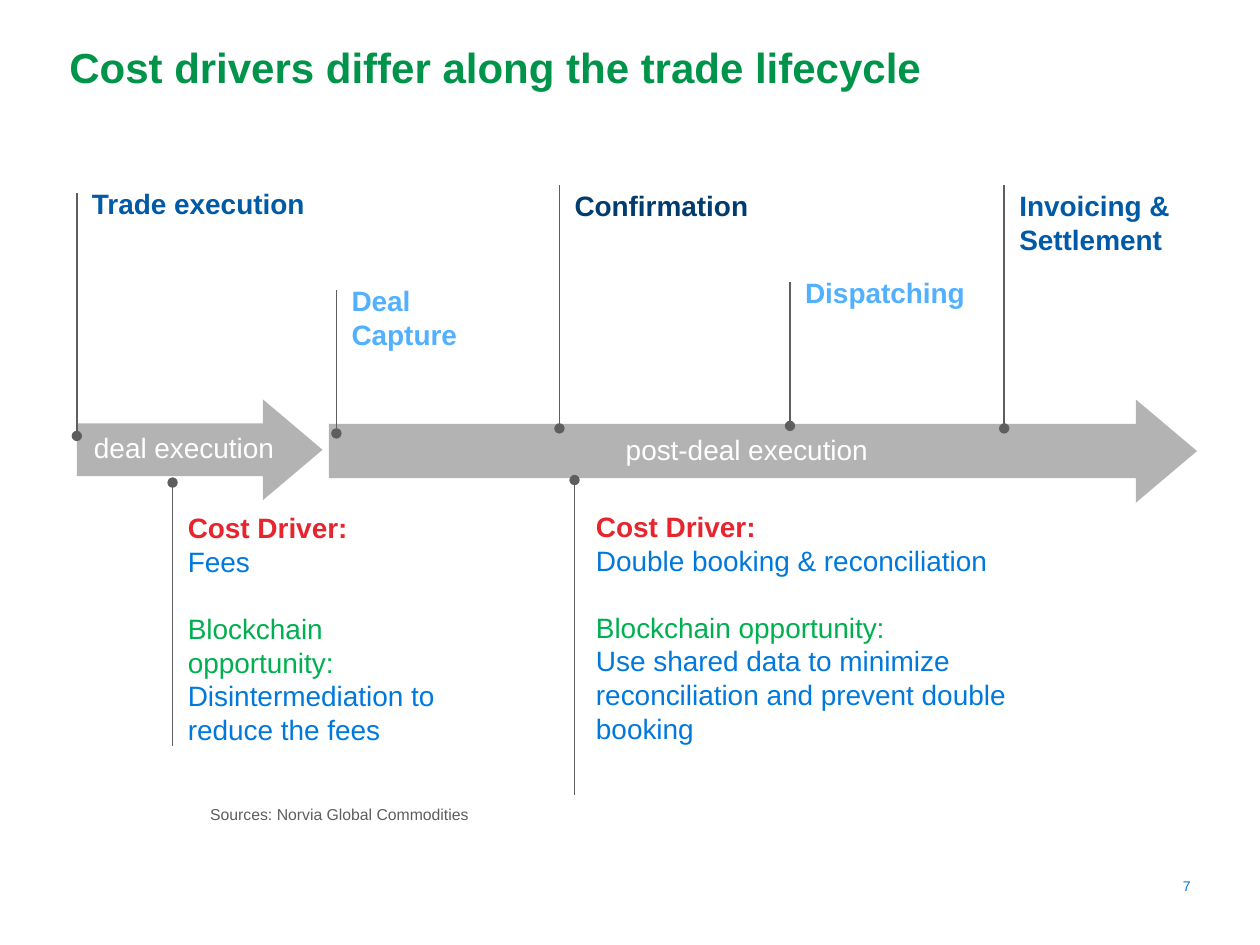
"""Build the slide on cost drivers along the trade lifecycle."""
from lxml import etree
from pptx import Presentation
from pptx.dml.color import RGBColor
from pptx.enum.shapes import MSO_CONNECTOR as CONNECTOR, MSO_SHAPE as SHAPE
from pptx.enum.text import MSO_ANCHOR as ANCHOR, PP_ALIGN as ALIGN
from pptx.oxml.ns import qn
from pptx.util import Inches, Pt

GREY = "5E5E5E"
BLUE = "0078DC"
RED = "E6252E"
GREEN = "00B050"


def rgb(code):
    return RGBColor.from_string(code)


def write(shape, lines, size, anchor=ANCHOR.TOP, align=ALIGN.LEFT, spacing=None, insets=(0, 0, 0, 0)):
    frame = shape.text_frame
    frame.word_wrap = True
    frame.vertical_anchor = anchor
    frame.margin_left, frame.margin_top, frame.margin_right, frame.margin_bottom = map(Inches, insets)
    frame.text = "\n".join(text for text, color, bold in lines)
    for paragraph, (text, color, bold) in zip(frame.paragraphs, lines):
        paragraph.alignment = align
        paragraph.line_spacing = spacing or Pt(size * 1.2)
        font = paragraph.runs[0].font
        font.name = "Arial"
        font.size = Pt(size)
        font.bold = bold
        font.color.rgb = rgb(color)


deck = Presentation()
deck.slide_width, deck.slide_height = Inches(10), Inches(7.5)
slide = deck.slides.add_slide(deck.slide_layouts[5])
shapes = slide.shapes

title = shapes.title
title.left, title.top, title.width, title.height = map(Inches, (0.55, 0.33, 8.9, 0.98))
write(title, [("Cost drivers differ along the trade lifecycle", "00944A", True)], 24)

phases = [
    ("deal execution", 0.61, 1.95, 0.8),
    ("post-deal execution", 2.61, 6.89, 0.82),
]
for phase, left, width, height in phases:
    arrow = shapes.add_shape(SHAPE.RIGHT_ARROW, Inches(left), Inches(3.17), Inches(width), Inches(height))
    arrow.adjustments[0], arrow.adjustments[1] = 0.525, 0.592
    arrow.shadow.inherit = False
    arrow.fill.solid()
    arrow.fill.fore_color.rgb = rgb("B3B3B3")
    arrow.line.fill.background()
    write(arrow, [(phase, "FFFFFF", False)], 16, ANCHOR.MIDDLE, ALIGN.CENTER, 0.9, (0.1, 0.05, 0.1, 0.05))

steps = [
    ("Trade execution", "005AA5", 0.61, 1.48, 1.88, 0.54),
    ("Deal Capture", "51B0FF", 2.67, 2.25, 1.44, 0.81),
    ("Confirmation", "003C6E", 4.44, 1.5, 1.74, 0.54),
    ("Dispatching", "51B0FF", 6.27, 2.19, 1.56, 0.54),
    ("Invoicing & Settlement", "005AA5", 7.97, 1.5, 1.74, 0.81),
]
for step, color, left, top, width, height in steps:
    label = shapes.add_textbox(Inches(left), Inches(top), Inches(width), Inches(height))
    write(label, [(step, color, True)], 16, insets=(0.12, 0, 0, 0))

drivers = [
    ("Fees", "Disintermediation to reduce the fees", 1.37, 4.04, 2.19),
    ("Double booking & reconciliation",
     "Use shared data to minimize reconciliation and prevent double booking", 4.61, 4.03, 3.49),
]
for cost, opportunity, left, top, width in drivers:
    driver = shapes.add_textbox(Inches(left), Inches(top), Inches(width), Inches(1.88))
    lines = [
        ("Cost Driver:", RED, True),
        (cost, BLUE, False),
        ("Blockchain opportunity:", GREEN, False),
        (opportunity, BLUE, False),
    ]
    write(driver, lines, 16, ANCHOR.BOTTOM, insets=(0.12, 0, 0, 0))
    driver.text_frame.paragraphs[2].space_before = Pt(19.2)

markers = [
    (0.61, 3.46, 1.53, 1),
    (2.67, 3.44, 2.3, 0.75),
    (4.44, 3.4, 1.47, 1),
    (6.27, 3.38, 2.24, 0.75),
    (7.97, 3.4, 1.47, 1),
    (1.37, 3.83, 5.92, 1),
    (4.56, 3.81, 6.31, 1),
]
for x, dot_y, end_y, weight in markers:
    marker = shapes.add_connector(CONNECTOR.STRAIGHT, Inches(x), Inches(dot_y), Inches(x), Inches(end_y))
    marker.line.color.rgb = rgb(GREY)
    marker.line.width = Pt(weight)
    etree.SubElement(marker.line._get_or_add_ln(), qn("a:headEnd"), type="oval")
    etree.SubElement(marker._element.spPr, qn("a:effectLst"))

source = shapes.add_textbox(Inches(1.57), Inches(6.34), Inches(3.58), Inches(0.25))
write(source, [("Sources: Norvia Global Commodities", GREY, False)], 9, insets=(0.1, 0.05, 0.1, 0.05))

page_number = shapes.add_textbox(Inches(9.06), Inches(6.65), Inches(0.39), Inches(0.45))
write(page_number, [("7", BLUE, False)], 8, ANCHOR.BOTTOM, ALIGN.RIGHT)

deck.save("out.pptx")
